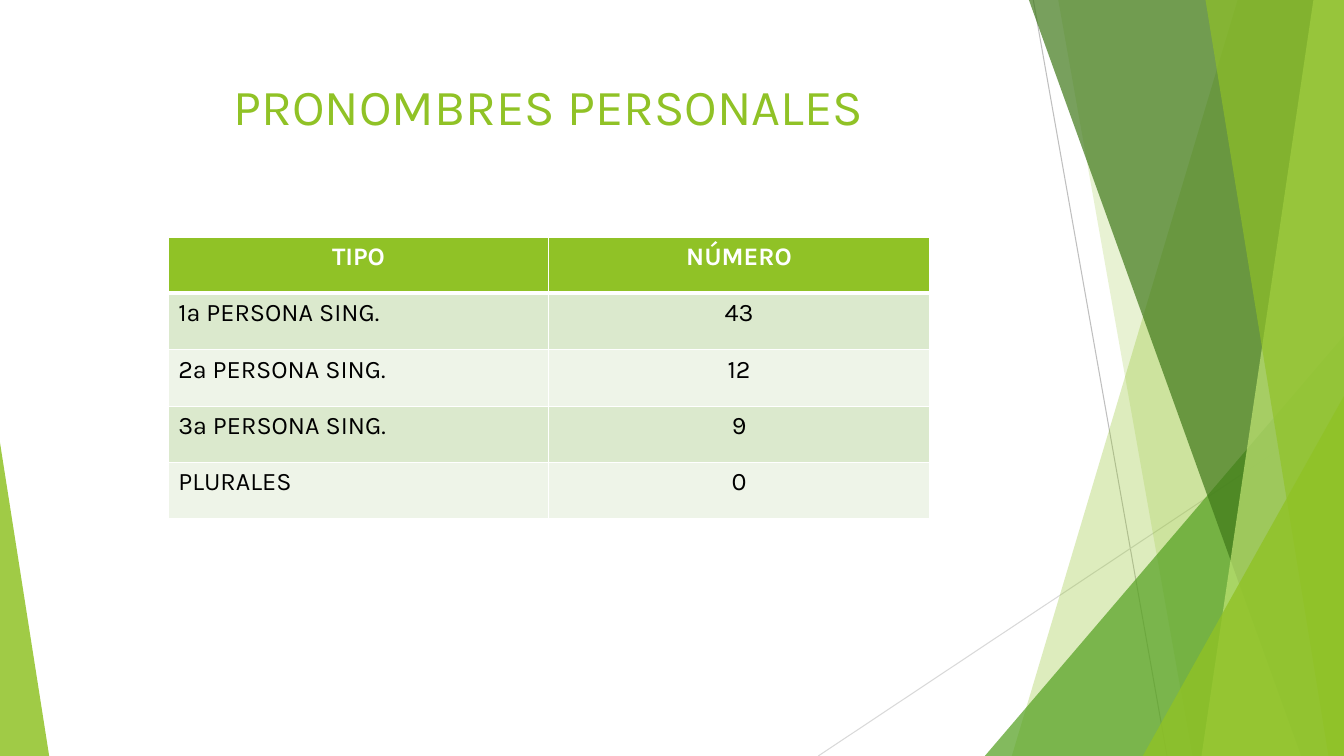
import lxml.etree
import pptx
import pptx.dml.color
import pptx.enum.shapes
import pptx.enum.text
import pptx.oxml
import pptx.oxml.ns
import pptx.util

Cm = pptx.util.Cm
Pt = pptx.util.Pt
RGBColor = pptx.dml.color.RGBColor
ALIGN = pptx.enum.text.PP_ALIGN

LIME = RGBColor(0x90, 0xC2, 0x26)
PALE_LIME = RGBColor(0xC0, 0xE4, 0x74)
GREEN = RGBColor(0x54, 0xA0, 0x21)
DARK_GREEN = RGBColor(0x3F, 0x78, 0x19)
BAND_DARK = RGBColor(0xDB, 0xE9, 0xCD)
BAND_LIGHT = RGBColor(0xEE, 0xF4, 0xE8)
GREY = RGBColor(0xBF, 0xBF, 0xBF)
LIGHT_GREY = RGBColor(0xD9, 0xD9, 0xD9)
WHITE = RGBColor(0xFF, 0xFF, 0xFF)
BLACK = RGBColor(0, 0, 0)

FONT = "Karla"
WIDTH, HEIGHT = 33.87, 19.05

PRONOUNS = [
    ("TIPO", "NÚMERO"),
    ("1ª PERSONA SING.", "43"),
    ("2ª PERSONA SING.", "12"),
    ("3ª PERSONA SING.", "9"),
    ("PLURALES", "0"),
]


def add_child(parent, tag, **attributes):
    return lxml.etree.SubElement(parent, pptx.oxml.ns.qn(tag), **attributes)


def paint(facet, color, opacity):
    """Fill a facet with a see-through colour; opacity is in percent."""
    facet.shadow.inherit = False
    facet.line.fill.background()
    facet.fill.solid()
    facet.fill.fore_color.rgb = color
    color_node = facet.fill._xPr.find(".//" + pptx.oxml.ns.qn("a:srgbClr"))
    add_child(color_node, "a:alpha", val=str(opacity * 1000))


def add_ray(slide, start, end, color):
    ray = slide.shapes.add_connector(
        pptx.enum.shapes.MSO_CONNECTOR.STRAIGHT, *map(Cm, start + end))
    ray.line.color.rgb = color
    ray.line.width = Pt(0.75)
    add_child(ray._element.spPr, "a:effectLst")


def add_band(slide, top_x, bottom_x, color, opacity):
    """Full-height facet from a slanted left edge to the slide's right edge."""
    outline = slide.shapes.build_freeform(Cm(top_x), 0)
    outline.add_line_segments([
        (Cm(WIDTH), 0), (Cm(WIDTH), Cm(HEIGHT)), (Cm(bottom_x), Cm(HEIGHT))])
    paint(outline.convert_to_shape(), color, opacity)


def add_corner(slide, left, top, width, apex, color, opacity):
    """Triangle standing on the slide's bottom edge; apex 0 is left, 1 right."""
    corner = slide.shapes.add_shape(
        pptx.enum.shapes.MSO_SHAPE.ISOSCELES_TRIANGLE,
        Cm(left), Cm(top), Cm(width), Cm(HEIGHT - top))
    corner.adjustments[0] = apex
    paint(corner, color, opacity)


def add_facets(slide):
    add_ray(slide, (26.04, 0), (29.41, HEIGHT), GREY)
    add_ray(slide, (WIDTH, 10.24), (20.62, HEIGHT), LIGHT_GREY)
    add_band(slide, 31.19, 25.5, LIME, 30)
    add_band(slide, 26.67, 30.05, LIME, 20)
    add_corner(slide, 24.82, 8.46, WIDTH - 24.82, 1, GREEN, 72)
    add_band(slide, 25.93, 32.79, DARK_GREEN, 70)
    add_band(slide, 33.1, 30.28, PALE_LIME, 70)
    add_band(slide, 30.38, 33.48, LIME, 65)
    add_corner(slide, 28.8, 9.98, WIDTH - 28.8, 1, LIME, 80)
    add_corner(slide, 0, 11.15, 1.24, 0, LIME, 85)


def add_title(slide, left, top, width, height):
    title = slide.shapes.title
    title.left, title.top, title.width, title.height = map(
        Cm, (left, top, width, height))
    title.text_frame.text = "PRONOMBRES PERSONALES"
    title.text_frame.vertical_anchor = pptx.enum.text.MSO_ANCHOR.MIDDLE
    heading = title.text_frame.paragraphs[0]
    heading.alignment = ALIGN.CENTER
    heading.font.name = FONT
    heading.font.size = Pt(36)
    heading.font.color.rgb = LIME


def set_borders(cell, top_width, bottom_width):
    """White borders, in points; they must precede the fill in the cell."""
    widths = {"L": 1, "R": 1, "T": top_width, "B": bottom_width}
    properties = cell._tc.get_or_add_tcPr()
    for position, (side, width) in enumerate(widths.items()):
        border = add_child(properties, "a:ln" + side, w=str(Pt(width)))
        fill = add_child(border, "a:solidFill")
        add_child(fill, "a:srgbClr", val=str(WHITE))
        properties.insert(position, border)


def add_pronoun_table(slide, left, top, width, height):
    table = slide.shapes.add_table(
        len(PRONOUNS), 2, Cm(left), Cm(top), Cm(width), Cm(height)).table
    for row, entries in enumerate(PRONOUNS):
        header = row == 0
        band = LIME if header else BAND_DARK if row % 2 else BAND_LIGHT
        for column, entry in enumerate(entries):
            cell = table.cell(row, column)
            cell.fill.solid()
            cell.fill.fore_color.rgb = band
            set_borders(cell, 3 if row == 1 else 1, 3 if header else 1)
            cell.text = entry
            label = cell.text_frame.paragraphs[0]
            label.alignment = ALIGN.CENTER if header or column else ALIGN.LEFT
            label.font.name = FONT
            label.font.size = Pt(18)
            label.font.bold = header
            label.font.color.rgb = WHITE if header else BLACK


def main():
    presentation = pptx.Presentation()
    presentation.slide_width = Cm(WIDTH)
    presentation.slide_height = Cm(HEIGHT)
    slide = presentation.slides.add_slide(presentation.slide_layouts[5])
    add_facets(slide)
    add_title(slide, 1.88, 1.7, 23.88, 1.9)
    add_pronoun_table(slide, 4.24, 5.97, 19.18, 7.11)
    presentation.save("out.pptx")


if __name__ == "__main__":
    main()
